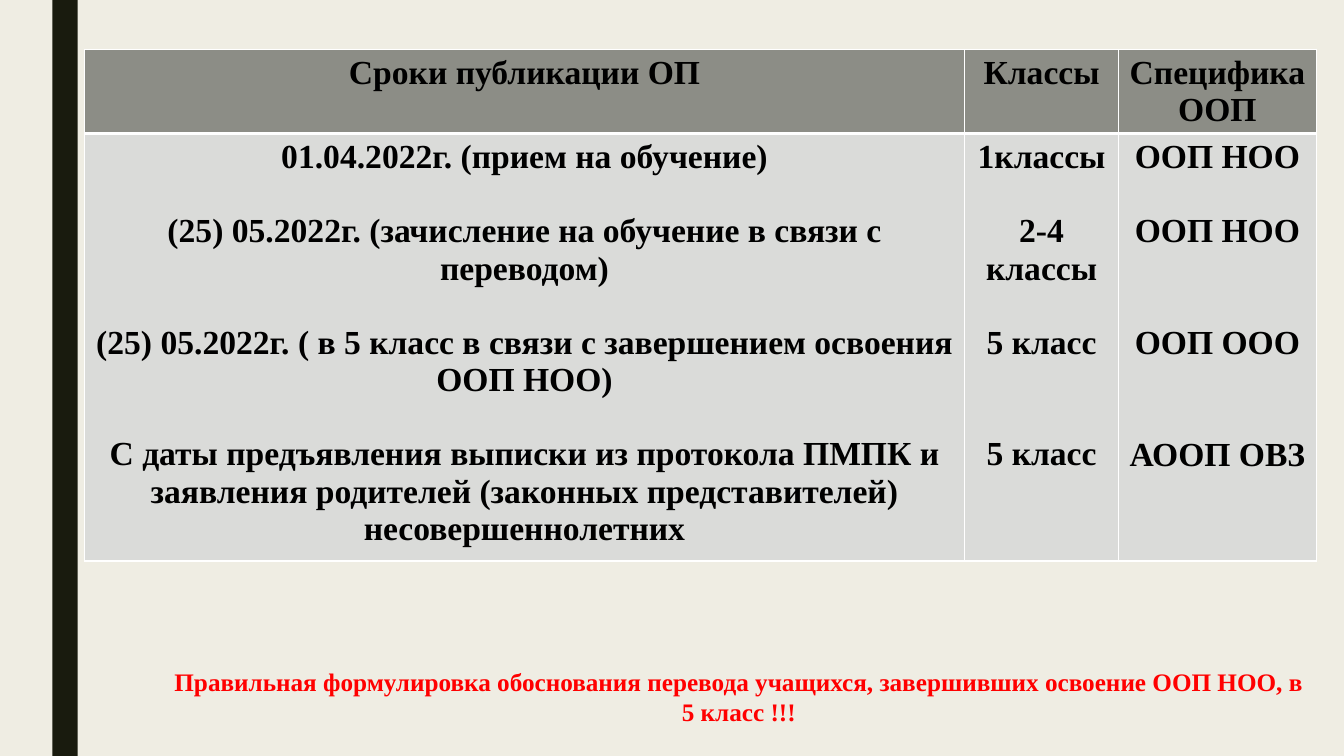
"""Builds the slide on publication dates of school programmes."""
import lxml.etree
import pptx
import pptx.dml.color
import pptx.enum.shapes
import pptx.enum.text
import pptx.oxml.ns
import pptx.util

Cm = pptx.util.Cm
Pt = pptx.util.Pt
RGBColor = pptx.dml.color.RGBColor
CENTER = pptx.enum.text.PP_ALIGN.CENTER

CREAM = RGBColor(0xEF, 0xED, 0xE3)
DARK = RGBColor(0x19, 0x1B, 0x0E)
HEADER_GREY = RGBColor(0x8C, 0x8D, 0x86)
BODY_GREY = RGBColor(0xDA, 0xDB, 0xD9)
BLACK = RGBColor(0, 0, 0)
WHITE = RGBColor(0xFF, 0xFF, 0xFF)
RED = RGBColor(0xFF, 0, 0)

FONT = "Times New Roman"
LINE_PT = 26.57
COLUMN_SHARES = (8.73, 1.53, 1.96)
HEADER_HEIGHT = Cm(2.1)

HEADERS = ("Сроки публикации ОП", "Классы", "Специфика ООП")
BODY = (
    (
        (0, "01.04.2022г. (прием на обучение)"),
        (1, "(25) 05.2022г. (зачисление на обучение в связи с переводом)"),
        (1, "(25) 05.2022г. ( в 5 класс в связи с завершением освоения ООП НОО)"),
        (1, "С даты предъявления выписки из протокола ПМПК и заявления "
            "родителей (законных представителей) несовершеннолетних"),
    ),
    ((0, "1классы"), (1, "2-4 классы"), (1, "5 класс"), (2, "5 класс")),
    ((0, "ООП НОО"), (1, "ООП НОО"), (2, "ООП ООО"), (2, "АООП ОВЗ")),
)
NOTICE = ("Правильная формулировка обоснования перевода учащихся, "
          "завершивших освоение ООП НОО, в 5 класс !!!")


def write_paragraphs(tf, entries, size, color):
    """Write centred bold paragraphs, each after its number of skipped lines."""
    tf.word_wrap = True
    for i, (skipped, text) in enumerate(entries):
        p = tf.add_paragraph() if i else tf.paragraphs[0]
        p.text = text
        p.alignment = CENTER
        p.space_before = Pt(skipped * LINE_PT)
        p.font.name = FONT
        p.font.size = Pt(size)
        p.font.bold = True
        p.font.color.rgb = color


def set_borders(cell, top, bottom):
    """Give a cell white borders with the top and bottom widths in points."""
    qn = pptx.oxml.ns.qn
    tcPr = cell._tc.get_or_add_tcPr()
    for side, width in (("L", 1), ("R", 1), ("T", top), ("B", bottom)):
        ln = lxml.etree.SubElement(tcPr, qn(f"a:ln{side}"), w=str(Pt(width)))
        fill = lxml.etree.SubElement(ln, qn("a:solidFill"))
        lxml.etree.SubElement(fill, qn("a:srgbClr"), val=str(WHITE))


def add_side_bar(slide, left, top, width, height):
    """Draw the dark vertical bar."""
    sp = slide.shapes.add_shape(
        pptx.enum.shapes.MSO_SHAPE.RECTANGLE, left, top, width, height)
    sp.shadow.inherit = False
    sp.fill.solid()
    sp.fill.fore_color.rgb = DARK
    sp.line.fill.background()


def add_schedule(slide, left, top, width, height):
    """Place the table of dates, classes and programmes."""
    table = slide.shapes.add_table(
        2, len(HEADERS), left, top, width, height).table
    table.rows[0].height = HEADER_HEIGHT
    table.rows[1].height = height - HEADER_HEIGHT
    for i, share in enumerate(COLUMN_SHARES):
        table.columns[i].width = int(width * share / sum(COLUMN_SHARES))
        rows = (
            ([(0, HEADERS[i])], HEADER_GREY, 1, 3),
            (BODY[i], BODY_GREY, 3, 1),
        )
        for j, (entries, grey, top_width, bottom_width) in enumerate(rows):
            cell = table.cell(j, i)
            set_borders(cell, top_width, bottom_width)
            cell.fill.solid()
            cell.fill.fore_color.rgb = grey
            write_paragraphs(cell.text_frame, entries, 24, BLACK)


def add_notice(slide, left, top, width, height):
    """Place the red notice under the table."""
    tf = slide.shapes.add_textbox(left, top, width, height).text_frame
    write_paragraphs(tf, [(0, NOTICE)], 18, RED)


def main():
    """Build and save the presentation."""
    prs = pptx.Presentation()
    prs.slide_width, prs.slide_height = Cm(33.87), Cm(19.05)
    slide = prs.slides.add_slide(prs.slide_layouts[6])
    slide.background.fill.solid()
    slide.background.fill.fore_color.rgb = CREAM
    add_side_bar(slide, Cm(1.32), 0, Cm(0.64), prs.slide_height)
    add_schedule(slide, Cm(2.13), Cm(1.24), Cm(31.04), Cm(12.87))
    add_notice(slide, Cm(4.09), Cm(16.66), Cm(29.06), Cm(1.8))
    prs.save("out.pptx")


if __name__ == "__main__":
    main()
